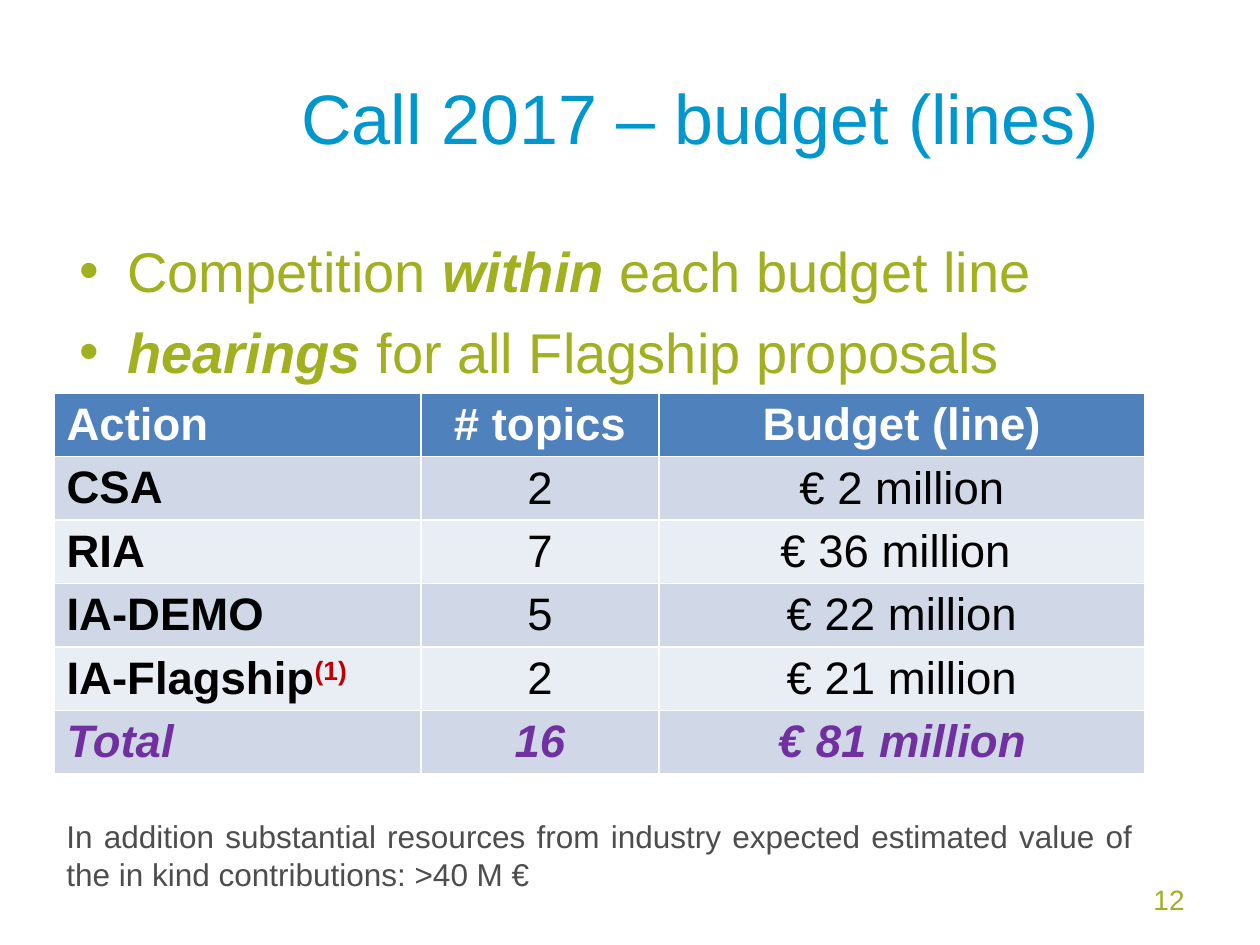
from dataclasses import dataclass

from lxml.etree import SubElement
from pptx import Presentation
from pptx.dml.color import RGBColor
from pptx.enum.text import MSO_ANCHOR as Anchor, MSO_AUTO_SIZE as AutoSize, PP_ALIGN as Align
from pptx.oxml.ns import qn
from pptx.util import Emu, Pt

PX_PER_INCH = 126


def px(length):
    return Emu(round(length * 914400 / PX_PER_INCH))


@dataclass(frozen=True)
class Theme:
    font: str = "Arial"
    blue: str = "0097CE"
    green: str = "A0B01E"
    grey: str = "4D4D4D"
    white: str = "FFFFFF"
    black: str = "000000"
    red: str = "C00000"
    purple: str = "7030A0"
    header_fill: str = "4F81BD"
    band_fills: tuple = ("D0D8E8", "E9EDF4")
    title_size: int = 40
    bullet_size: int = 32
    table_size: int = 26
    note_size: int = 18
    number_size: int = 16


def add_text(paragraph, text, *, font, size, color, bold=False, italic=False, raised=False):
    run = paragraph.add_run()
    run.text = text
    run.font.name = font
    run.font.size = Pt(size)
    run.font.bold = bold
    run.font.italic = italic
    run.font.color.rgb = RGBColor.from_string(color)
    if raised:
        run.font._element.set("baseline", "30000")


def add_bullet(paragraph, indent):
    properties = paragraph._p.get_or_add_pPr()
    properties.set("marL", str(indent))
    properties.set("indent", str(-indent))
    SubElement(properties, qn("a:buFont"), typeface="Arial")
    SubElement(properties, qn("a:buChar"), char="•")


class SlideBuilder:
    def __init__(self, slide, theme):
        self.slide = slide
        self.theme = theme

    def styled_run(self, paragraph, text, **text_format):
        add_text(paragraph, text, font=self.theme.font, **text_format)

    def title(self, text, left, top, width, height):
        shape = self.slide.shapes.title
        shape.left, shape.top, shape.width, shape.height = map(px, (left, top, width, height))
        shape.text_frame.vertical_anchor = Anchor.MIDDLE
        paragraph = shape.text_frame.paragraphs[0]
        paragraph.alignment = Align.CENTER
        self.styled_run(paragraph, text, size=self.theme.title_size, color=self.theme.blue)

    def text_frame(self, left, top, width, height):
        frame = self.slide.shapes.add_textbox(*map(px, (left, top, width, height))).text_frame
        frame.word_wrap = True
        frame.auto_size = AutoSize.NONE
        return frame

    def label(self, text, left, top, width, height, *, align, **text_format):
        paragraph = self.text_frame(left, top, width, height).paragraphs[0]
        paragraph.alignment = align
        self.styled_run(paragraph, text, **text_format)

    def bullets(self, items, left, top, width, height):
        """Each item is a list of (text, emphasised) pairs."""
        frame = self.text_frame(left, top, width, height)
        frame.margin_top = px(12)
        for index, item in enumerate(items):
            paragraph = frame.add_paragraph() if index else frame.paragraphs[0]
            add_bullet(paragraph, px(48))
            if index:
                paragraph.space_before = Pt(8)
            for text, emphasised in item:
                self.styled_run(paragraph, text, size=self.theme.bullet_size,
                                color=self.theme.green, bold=emphasised, italic=emphasised)

    def table(self, rows, left, top, column_widths, row_height):
        """The first row is the header, the last one the total."""
        theme = self.theme
        table = self.slide.shapes.add_table(
            len(rows), len(column_widths), px(left), px(top),
            px(sum(column_widths)), px(row_height * len(rows))).table
        for column, width in zip(table.columns, column_widths):
            column.width = px(width)
        for row_index, values in enumerate(rows):
            table.rows[row_index].height = px(row_height)
            is_header, is_total = row_index == 0, row_index == len(rows) - 1
            color = theme.white if is_header else theme.purple if is_total else theme.black
            fill = theme.header_fill if is_header else theme.band_fills[(row_index - 1) % 2]
            for column_index, value in enumerate(values):
                cell = table.cell(row_index, column_index)
                cell.fill.solid()
                cell.fill.fore_color.rgb = RGBColor.from_string(fill)
                paragraph = cell.text_frame.paragraphs[0]
                if column_index:
                    paragraph.alignment = Align.CENTER
                    if not is_header:
                        cell.vertical_anchor = Anchor.MIDDLE
                self.styled_run(paragraph, value, size=theme.table_size, color=color,
                                bold=is_header or is_total or column_index == 0,
                                italic=is_total)
        return table

    def footnote_mark(self, cell, text):
        self.styled_run(cell.text_frame.paragraphs[0], text, size=self.theme.table_size,
                        color=self.theme.red, bold=True, raised=True)


BULLETS = [
    [("Competition ", False), ("within", True), (" each budget line", False)],
    [("hearings", True), (" for all Flagship proposals", False)],
]
BUDGET = [
    ("Action", "# topics", "Budget (line)"),
    ("CSA", "2", "€ 2 million"),
    ("RIA", "7", "€ 36 million "),
    ("IA-DEMO", "5", "€ 22 million"),
    ("IA-Flagship", "2", "€ 21 million"),
    ("Total", "16", "€ 81 million"),
]
NOTE = ("In addition substantial resources from industry expected estimated value of "
        "the in kind contributions: >40 M €")


def main():
    theme = Theme()
    presentation = Presentation()
    presentation.slide_width, presentation.slide_height = px(1260), px(945)
    slide = presentation.slides.add_slide(presentation.slide_layouts[5])
    builder = SlideBuilder(slide, theme)

    builder.title("Call 2017 – budget (lines)", 203, 38, 994, 158)
    builder.bullets(BULLETS, 67, 224, 1134, 500)
    builder.label("12", 1086, 876, 111, 43, align=Align.RIGHT,
                  size=theme.number_size, color=theme.green)
    table = builder.table(BUDGET, 54, 393, (367, 238, 486), 63)
    builder.footnote_mark(table.cell(4, 0), "(1)")
    builder.label(NOTE, 54, 811, 1091, 89, align=Align.JUSTIFY,
                  size=theme.note_size, color=theme.grey)

    presentation.save("out.pptx")


if __name__ == "__main__":
    main()
